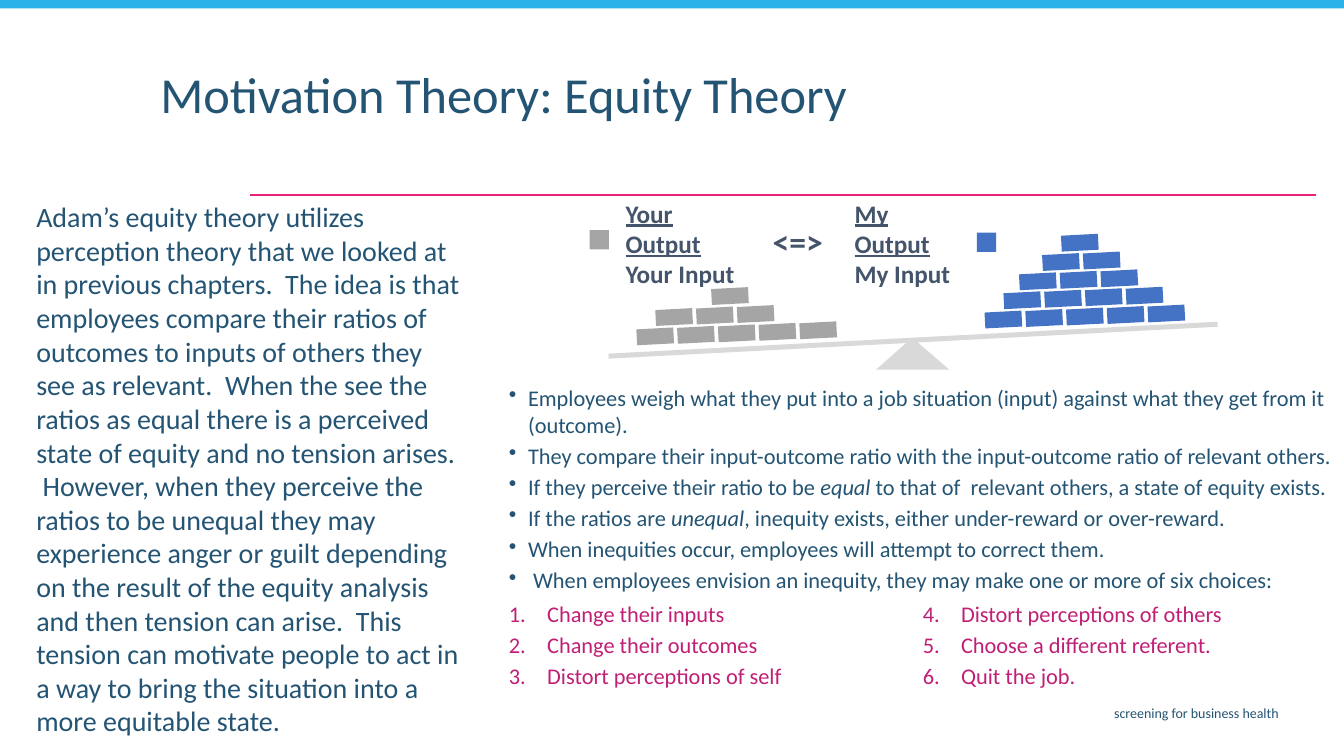
from lxml.etree import SubElement
from pptx import Presentation
from pptx.dml.color import RGBColor
from pptx.enum.shapes import MSO_CONNECTOR, MSO_SHAPE
from pptx.enum.text import MSO_ANCHOR, PP_ALIGN
from pptx.oxml.ns import qn
from pptx.util import Emu, Inches, Pt

NAVY, MAGENTA, SLATE = "245473", "C01F75", "44546A"
BLUE, GREY, PALE = "4472C4", "A5A5A5", "D9D9D9"
TILT = 357


def rgb(value):
    return RGBColor.from_string(value)


class Deck:
    """Style and current slide; lengths are cells of a 160 by 90 grid."""

    font = "Calibri"

    def __init__(self):
        self.prs = Presentation()
        self.prs.slide_width, self.prs.slide_height = Inches(13.333), Inches(7.5)
        self.cell = self.prs.slide_height / 90
        self.s = self.prs.slides.add_slide(self.prs.slide_layouts[6])

    def grid(self, *cells):
        return [Emu(round(c * self.cell)) for c in cells]

    def paint(self, sp, color):
        sp.shadow.inherit = False
        sp.fill.solid()
        sp.fill.fore_color.rgb = rgb(color)
        sp.line.fill.background()

    def rect(self, x, y, w, h, color, rotation=0):
        sp = self.s.shapes.add_shape(MSO_SHAPE.RECTANGLE, *self.grid(x, y, w, h))
        self.paint(sp, color)
        sp.rotation = rotation

    def polygon(self, points, color):
        first, *rest = [self.grid(*point) for point in points]
        builder = self.s.shapes.build_freeform(*first)
        builder.add_line_segments(rest, close=True)
        self.paint(builder.convert_to_shape(), color)

    def line(self, x1, y1, x2, y2, color, width):
        cx = self.s.shapes.add_connector(
            MSO_CONNECTOR.STRAIGHT, *self.grid(x1, y1, x2, y2))
        cx.line.color.rgb = rgb(color)
        cx.line.width = Pt(width)
        SubElement(cx.element.spPr, qn("a:effectLst"))

    def text(self, x, y, w, h, paragraphs, size, color=NAVY, bold=False,
             align=PP_ALIGN.LEFT, anchor=MSO_ANCHOR.TOP, inset=(0.1, 0.05),
             before=0, spacing=None):
        """Add a text box; words between asterisks are italic."""
        sp = self.s.shapes.add_textbox(*self.grid(x, y, w, h))
        tf = sp.text_frame
        tf.word_wrap = True
        tf.vertical_anchor = anchor
        tf.margin_left = tf.margin_right = Inches(inset[0])
        tf.margin_top = tf.margin_bottom = Inches(inset[1])
        for i, words in enumerate(paragraphs):
            p = tf.add_paragraph() if i else tf.paragraphs[0]
            p.alignment = align
            p.space_before = Pt(before if i else 0)
            p.line_spacing = spacing
            first, *rest = words.split("*")
            p.text = first
            for j, part in enumerate(rest):
                r = p.add_run()
                r.text = part
                r.font.italic = j % 2 == 0
            for r in p.runs:
                r.font.name, r.font.size, r.font.bold = self.font, Pt(size), bold
                r.font.color.rgb = rgb(color)
        return sp

    def bullets(self, *box, indent, tag, columns=1, **marker):
        """Add a list to the box given as x, y, w, h, paragraphs, size, color."""
        sp = self.text(*box, inset=(0.04, 0.02), before=3)
        if columns > 1:
            sp.element.txBody.bodyPr.set("numCol", str(columns))
        for p in sp.text_frame.paragraphs:
            pPr = p._p.get_or_add_pPr()
            pPr.set("marL", str(Inches(indent)))
            pPr.set("indent", str(-Inches(indent)))
            SubElement(pPr, qn(tag), **marker)

    def ratio(self, x, w, owner):
        sp = self.text(x, 24.7, w, 8.5, [f"{owner} Output\v{owner} Input"], 18,
                       SLATE, True, anchor=MSO_ANCHOR.MIDDLE)
        sp.text_frame.paragraphs[0].runs[0].font.underline = True

    def bricks(self, rows, color):
        """Stack rows of (x, y, count) along the tilted beam."""
        for x, y, count in rows:
            for i in range(count):
                self.rect(x + 4.85 * i, y - 0.18 * i, 4.4, 1.9, color, TILT)


def main():
    deck = Deck()

    # Frame, footer and title
    deck.line(156.7, 23.2, 29.8, 23.2, "EC2179", 1.5)
    deck.rect(0, -0.2, 160, 1.2, "29B3E8")
    deck.text(43.8, 83.3, 109.6, 3.5, ["screening for business health"], 10,
              align=PP_ALIGN.RIGHT)
    deck.text(17.9, 7.8, 116.2, 9.1, ["Motivation Theory: Equity Theory"], 36,
              spacing=0.9)

    # Explanation
    deck.text(3.24, 23.3, 53, 66.7, [
        "Adam’s equity theory utilizes perception theory that we looked at in "
        "previous chapters.  The idea is that employees compare their ratios of "
        "outcomes to inputs of others they see as relevant.  When the see the "
        "ratios as equal there is a perceived state of equity and no tension "
        "arises.   However, when they perceive the ratios to be unequal they may "
        "experience anger or guilt depending on the result of the equity analysis "
        "and then tension can arise.  This tension can motivate people to act in "
        "a way to bring the situation into a more equitable state."],
        20, inset=(0.09, 0.04))

    # Seesaw with two piles of bricks
    deck.polygon([(108.6, 40.2), (113, 44), (104.3, 44)], PALE)
    deck.rect(72.4, 40.2, 72.6, 0.6, PALE, TILT)
    deck.bricks([(117.25, 37.1, 5), (119.5, 34.8, 4), (121.35, 32.55, 3),
                 (124.1, 30.25, 2), (126.35, 27.95, 1)], BLUE)
    deck.bricks([(75.8, 39.1, 5), (78.05, 36.8, 3), (84.7, 34.3, 1)], GREY)

    # Ratios being compared
    deck.rect(70.2, 27.4, 2.3, 2.3, GREY)
    deck.rect(116.3, 27.7, 2.3, 2.3, BLUE)
    deck.ratio(73.3, 16.9, "Your")
    deck.ratio(100.55, 15.4, "My")
    deck.text(90.8, 25.7, 8.4, 6, ["<=>"], 24, SLATE, True,
              anchor=MSO_ANCHOR.MIDDLE)

    # Key points and the six choices
    deck.bullets(60.1, 45.5, 99.9, 25.7, [
        "Employees weigh what they put into a job situation (input) against what "
        "they get from it (outcome).",
        "They compare their input-outcome ratio with the input-outcome ratio of "
        "relevant others.",
        "If they perceive their ratio to be *equal* to that of  relevant others, "
        "a state of equity exists.",
        "If the ratios are *unequal*, inequity exists, either under-reward or "
        "over-reward.",
        "When inequities occur, employees will attempt to correct them.",
        " When employees envision an inequity, they may make one or more of six "
        "choices:"],
        16, NAVY, indent=0.19, tag="a:buChar", char="•")
    deck.bullets(60.1, 71.2, 99.5, 11.6, [
        "Change their inputs", "Change their outcomes",
        "Distort perceptions of self", "Distort perceptions of others",
        "Choose a different referent.", "Quit the job."],
        16, MAGENTA, indent=0.38, tag="a:buAutoNum", columns=2,
        type="arabicPeriod")

    deck.prs.save("out.pptx")


if __name__ == "__main__":
    main()
